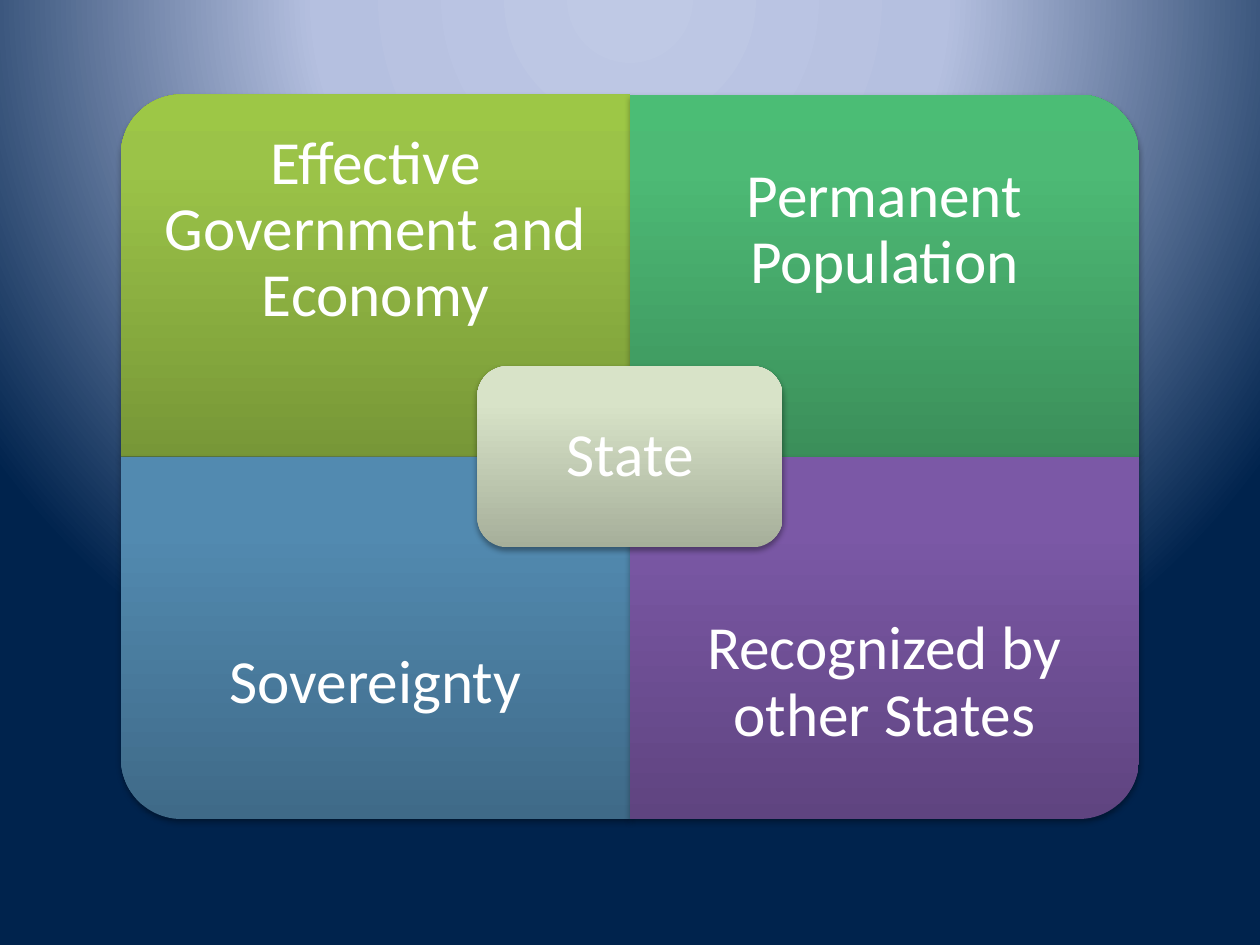
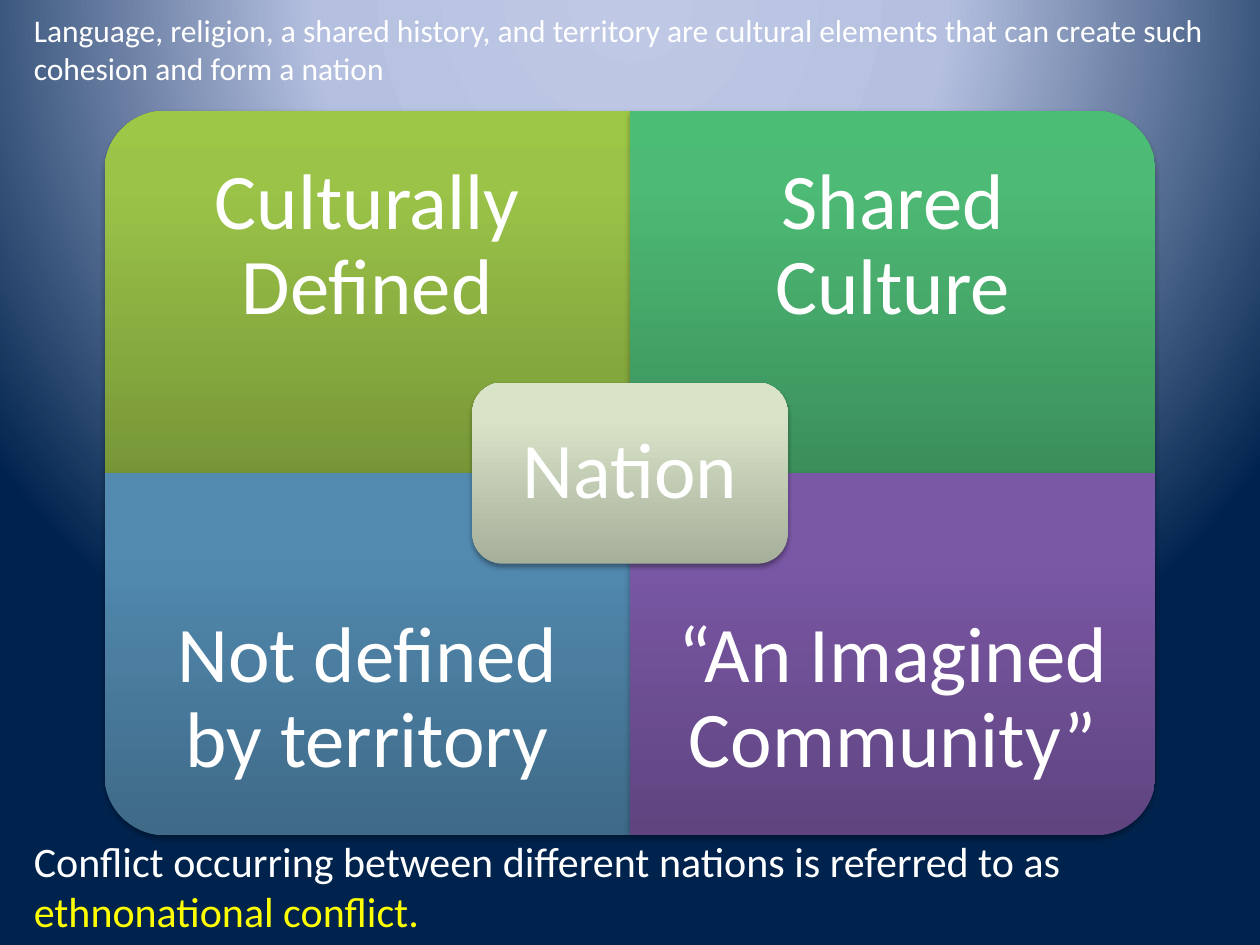
from dataclasses import dataclass

from lxml.etree import SubElement
from pptx import Presentation
from pptx.dml.color import RGBColor
from pptx.enum.shapes import MSO_SHAPE
from pptx.enum.text import MSO_ANCHOR, MSO_AUTO_SIZE, PP_ALIGN
from pptx.oxml.ns import qn
from pptx.util import Inches, Pt


@dataclass(frozen=True)
class Theme:
    font: str = "Calibri"
    text: str = "FFFFFF"
    highlight: str = "FFFF00"
    shadow: str = "000000"
    introduction_size: int = 18
    conclusion_size: int = 24
    background: tuple = ((0, "BFC9E5"), (40, "B5C0E0"), (100, "00234D"))
    green: tuple = ((0, "779737"), (80, "9BC348"), (100, "9DC746"))
    emerald: tuple = ((0, "3B8F5A"), (80, "4DBA75"), (100, "4BBD75"))
    blue: tuple = ((0, "3F6A88"), (80, "528AB0"), (100, "518BB3"))
    purple: tuple = ((0, "5F4480"), (80, "7B58A6"), (100, "7C57A8"))
    center: tuple = ((0, "A6AF9A"), (80, "D8E3C8"), (100, "D9E4C8"))


THEME = Theme()
SLIDE_WIDTH = 10
TILE_HEIGHT = 2.875
TILE_TEXT_SHARE = 0.75
CENTER_MARGIN = 0.07
TILES = (
    (0, 0, 270, THEME.green),
    (0, 1, 0, THEME.emerald),
    (1, 0, 180, THEME.blue),
    (1, 1, 90, THEME.purple),
)


def add_color(parent, color):
    return SubElement(parent, qn("a:srgbClr"), val=color)


def apply_gradient(fill, properties, stops, radial=False):
    fill.solid()
    solid = properties.find(qn("a:solidFill"))
    gradient = SubElement(properties, qn("a:gradFill"), rotWithShape="0")
    properties.replace(solid, gradient)
    stop_list = SubElement(gradient, qn("a:gsLst"))
    for position, color in stops:
        add_color(SubElement(stop_list, qn("a:gs"), pos=str(position * 1000)), color)
    if radial:
        circle = SubElement(gradient, qn("a:path"), path="circle")
        SubElement(circle, qn("a:fillToRect"), l="50000", t="-80000", r="50000", b="180000")
    else:
        SubElement(gradient, qn("a:lin"), ang="16200000", scaled="0")


def apply_background(master):
    fill = master.background.fill
    properties = master.element.find(".//" + qn("p:bgPr"))
    apply_gradient(fill, properties, THEME.background, radial=True)


def apply_shadow(shape):
    shape.shadow.inherit = False
    effects = shape.element.spPr.find(qn("a:effectLst"))
    shadow = SubElement(
        effects, qn("a:outerShdw"), blurRad=str(Pt(3.1)), dist=str(Pt(1.8)),
        dir="5400000", rotWithShape="0",
    )
    SubElement(add_color(shadow, THEME.shadow), qn("a:alpha"), val="35000")


def add_panel(shapes, preset, left, top, width, height, stops, rotation=0):
    middle_x, middle_y = left + width / 2, top + height / 2
    if rotation % 180:
        width, height = height, width
    shape = shapes.add_shape(
        preset, Inches(middle_x - width / 2), Inches(middle_y - height / 2),
        Inches(width), Inches(height),
    )
    shape.rotation = rotation
    apply_gradient(shape.fill, shape.element.spPr, stops)
    shape.line.fill.background()
    apply_shadow(shape)


def add_text(shapes, runs, left, top, width, height, *, size, inset=None,
             alignment=None, anchor=MSO_ANCHOR.TOP, line_spacing=None, grow=False):
    box = shapes.add_textbox(Inches(left), Inches(top), Inches(width), Inches(height))
    frame = box.text_frame
    frame.word_wrap = True
    frame.auto_size = MSO_AUTO_SIZE.SHAPE_TO_FIT_TEXT if grow else MSO_AUTO_SIZE.NONE
    frame.vertical_anchor = anchor
    if inset is not None:
        frame.margin_left = frame.margin_right = Pt(inset)
        frame.margin_top = frame.margin_bottom = Pt(inset)
    paragraph = frame.paragraphs[0]
    paragraph.alignment = alignment
    paragraph.line_spacing = line_spacing
    for text, color in runs:
        run = paragraph.add_run()
        run.text = text
        run.font.name = THEME.font
        run.font.size = Pt(size)
        run.font.color.rgb = RGBColor.from_string(color)


def add_label(shapes, text, *place, size, inset):
    add_text(shapes, [(text, THEME.text)], *place, size=size, inset=inset,
             alignment=PP_ALIGN.CENTER, anchor=MSO_ANCHOR.MIDDLE, line_spacing=0.9)


def add_matrix(slide, center_text, tile_texts, top, tile_width, size):
    shapes = slide.shapes.add_group_shape().shapes
    left = SLIDE_WIDTH / 2 - tile_width
    text_height = TILE_HEIGHT * TILE_TEXT_SHARE
    for (row, column, rotation, stops), text in zip(TILES, tile_texts):
        tile_left = left + column * tile_width
        tile_top = top + row * TILE_HEIGHT
        add_panel(shapes, MSO_SHAPE.ROUND_1_RECTANGLE, tile_left, tile_top,
                  tile_width, TILE_HEIGHT, stops, rotation)
        text_top = tile_top + row * (TILE_HEIGHT - text_height)
        add_label(shapes, text, tile_left, text_top, tile_width, text_height,
                  size=size, inset=size * 0.56)

    width, height = tile_width * 0.6, TILE_HEIGHT / 2
    center_left = (SLIDE_WIDTH - width) / 2
    center_top = top + TILE_HEIGHT - height / 2
    add_panel(shapes, MSO_SHAPE.ROUNDED_RECTANGLE, center_left, center_top,
              width, height, THEME.center)
    add_label(shapes, center_text, center_left + CENTER_MARGIN, center_top + CENTER_MARGIN,
              width - 2 * CENTER_MARGIN, height - 2 * CENTER_MARGIN,
              size=size, inset=size * 0.3)


def main():
    presentation = Presentation()
    presentation.slide_width = Inches(SLIDE_WIDTH)
    presentation.slide_height = Inches(7.5)
    apply_background(presentation.slide_master)
    blank_layout = presentation.slide_layouts[6]

    state_slide = presentation.slides.add_slide(blank_layout)
    add_matrix(
        state_slide, "State",
        ("Effective Government and Economy", "Permanent Population",
         "Sovereignty", "Recognized by other States"),
        top=0.75, tile_width=4.04, size=35,
    )

    nation_slide = presentation.slides.add_slide(blank_layout)
    add_matrix(
        nation_slide, "Nation",
        ("Culturally Defined", "Shared Culture",
         "Not defined by territory", "“An Imagined Community”"),
        top=0.88, tile_width=4.17, size=45,
    )
    introduction = (
        "Language, religion, a shared history, and territory are cultural elements "
        "that can create such cohesion and form a nation"
    )
    add_text(nation_slide.shapes, [(introduction, THEME.text)], 0.17, 0.04, 9.58, 0.71,
             size=THEME.introduction_size, grow=True)
    conclusion = (
        ("Conflict occurring between different nations is referred to as ", THEME.text),
        ("ethnonational conflict.", THEME.highlight),
    )
    add_text(nation_slide.shapes, conclusion, 0.17, 6.58, 9.5, 0.91,
             size=THEME.conclusion_size, grow=True)

    presentation.save("out.pptx")


if __name__ == "__main__":
    main()
